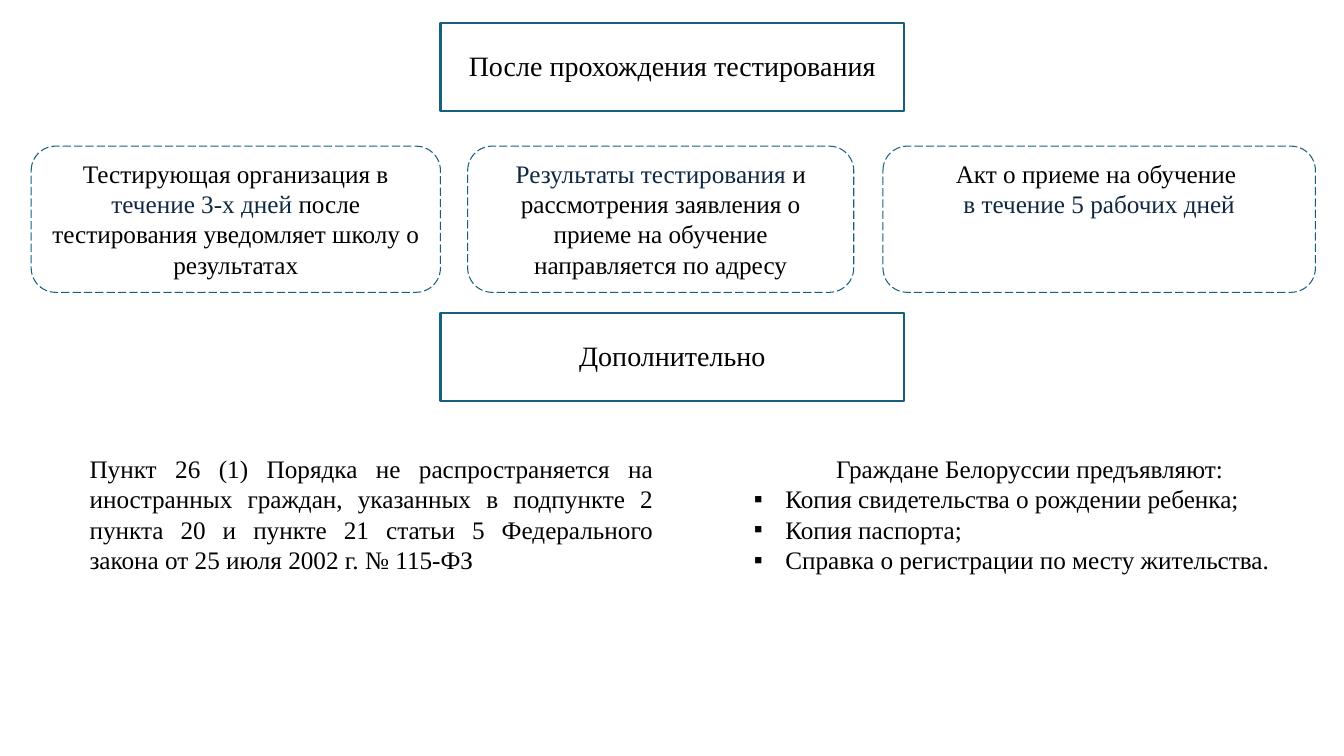
import dataclasses

import pptx
import pptx.dml.color
import pptx.enum.dml
import pptx.enum.shapes
import pptx.enum.text
import pptx.oxml.ns
import pptx.util
from lxml import etree

Pt = pptx.util.Pt
RGBColor = pptx.dml.color.RGBColor
Align = pptx.enum.text.PP_ALIGN
Anchor = pptx.enum.text.MSO_ANCHOR
Preset = pptx.enum.shapes.MSO_SHAPE
qn = pptx.oxml.ns.qn

FONT = "Times New Roman"
BLACK = RGBColor(0x00, 0x00, 0x00)
WHITE = RGBColor(0xFF, 0xFF, 0xFF)
NAVY = RGBColor(0x0E, 0x28, 0x41)
TEAL = RGBColor(0x15, 0x60, 0x82)

HEADING_SIZE, BODY_SIZE = 20, 18
HEADING_LEFT, HEADING_WIDTH, HEADING_HEIGHT = 314.64, 331.2, 62.64
CARD_TOP, CARD_HEIGHT = 104.4, 104.4
NOTE_TOP, NOTE_HEIGHT = 320.4, 94.32
BULLET_INDENT = 22.5


@dataclasses.dataclass
class Span:
    text: str
    color: RGBColor = BLACK


@dataclasses.dataclass
class Para:
    spans: list[Span]
    align: Align = Align.CENTER
    bullet: bool = False


@dataclasses.dataclass
class Block:
    left: float
    width: float
    paras: list[Para]


@dataclasses.dataclass
class Heading:
    top: float
    text: str


HEADINGS = [
    Heading(16.56, "После прохождения тестирования"),
    Heading(223.92, "Дополнительно"),
]

CARDS = [
    Block(22.32, 292.32, [Para([
        Span("Тестирующая организация в "),
        Span("течение 3-х дней ", NAVY),
        Span("после тестирования уведомляет школу о результатах"),
    ])]),
    Block(334.08, 275.76, [Para([
        Span("Результаты тестирования ", NAVY),
        Span("и рассмотрения заявления о приеме на обучение направляется по адресу"),
    ])]),
    Block(630.72, 308.88, [
        Para([Span("Акт о приеме на обучение ")]),
        Para([Span("в течение 5 рабочих дней", NAVY)]),
    ]),
]

DOCUMENTS = [
    "Копия свидетельства о рождении ребенка;",
    "Копия паспорта;",
    "Справка о регистрации по месту жительства.",
]

NOTES = [
    Block(56.88, 416.88, [Para([Span(
        "Пункт 26 (1) Порядка не распространяется на иностранных граждан, "
        "указанных в подпункте 2 пункта 20 и пункте 21 статьи 5 "
        "Федерального закона от 25 июля 2002 г. № 115-ФЗ"
    )], Align.JUSTIFY)]),
    Block(531.36, 408.24, [Para([Span("Граждане Белоруссии предъявляют:")])] + [
        Para([Span(document)], Align.JUSTIFY, bullet=True) for document in DOCUMENTS
    ]),
]


def add_bullet(paragraph) -> None:
    properties = paragraph._p.get_or_add_pPr()
    properties.set("marL", str(Pt(BULLET_INDENT)))
    properties.set("indent", str(-Pt(BULLET_INDENT)))
    etree.SubElement(properties, qn("a:buFont")).set("typeface", "Arial")
    etree.SubElement(properties, qn("a:buChar")).set("char", "▪")


def write(box, paras: list[Para], size: float, anchor: Anchor = Anchor.TOP) -> None:
    frame = box.text_frame
    frame.word_wrap = True
    frame.vertical_anchor = anchor
    for index, para in enumerate(paras):
        paragraph = frame.add_paragraph() if index else frame.paragraphs[0]
        paragraph.alignment = para.align
        if para.bullet:
            add_bullet(paragraph)
        for span in para.spans:
            run = paragraph.add_run()
            run.text = span.text
            run.font.name = FONT
            run.font.size = Pt(size)
            run.font.color.rgb = span.color


def add_frame(page, preset: Preset, left: float, top: float, width: float,
              height: float, line_width: float):
    box = page.shapes.add_shape(preset, Pt(left), Pt(top), Pt(width), Pt(height))
    box.shadow.inherit = False
    box.line.color.rgb = TEAL
    box.line.width = Pt(line_width)
    return box


def draw_heading(page, heading: Heading) -> None:
    box = add_frame(page, Preset.RECTANGLE, HEADING_LEFT, heading.top,
                    HEADING_WIDTH, HEADING_HEIGHT, 1.5)
    box.fill.solid()
    box.fill.fore_color.rgb = WHITE
    write(box, [Para([Span(heading.text)])], HEADING_SIZE, Anchor.MIDDLE)
    box.text_frame.paragraphs[0].line_spacing = 0.9


def draw_card(page, card: Block) -> None:
    box = add_frame(page, Preset.ROUNDED_RECTANGLE, card.left, CARD_TOP,
                    card.width, CARD_HEIGHT, 0.75)
    box.fill.background()
    box.line.dash_style = pptx.enum.dml.MSO_LINE.LONG_DASH
    write(box, card.paras, BODY_SIZE)


def draw_note(page, note: Block) -> None:
    box = page.shapes.add_textbox(Pt(note.left), Pt(NOTE_TOP),
                                  Pt(note.width), Pt(NOTE_HEIGHT))
    write(box, note.paras, BODY_SIZE)
    box.text_frame.auto_size = pptx.enum.text.MSO_AUTO_SIZE.SHAPE_TO_FIT_TEXT


def main() -> None:
    deck = pptx.Presentation()
    deck.slide_width, deck.slide_height = Pt(960), Pt(540)
    page = deck.slides.add_slide(deck.slide_layouts[6])

    # Section headings
    for heading in HEADINGS:
        draw_heading(page, heading)

    # Steps after the test
    for card in CARDS:
        draw_card(page, card)

    # Additional notes
    for note in NOTES:
        draw_note(page, note)

    deck.save("out.pptx")


if __name__ == "__main__":
    main()
